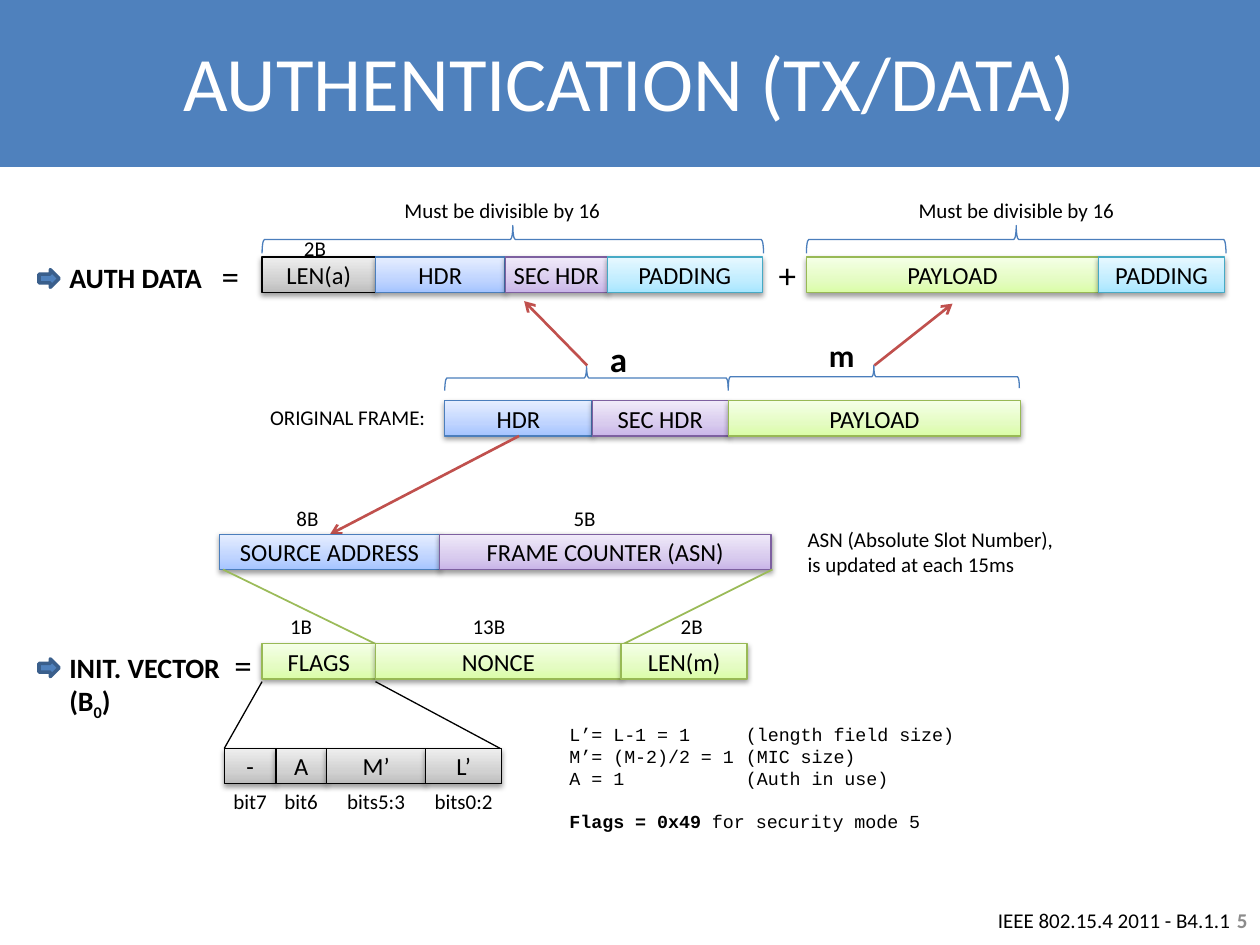
import copy

import lxml.etree
import pptx
import pptx.dml.color
import pptx.enum.shapes
import pptx.enum.text
import pptx.oxml.ns
import pptx.util

Inches = pptx.util.Inches
Pt = pptx.util.Pt
RGBColor = pptx.dml.color.RGBColor
Align = pptx.enum.text.PP_ALIGN
Anchor = pptx.enum.text.MSO_ANCHOR
Shape = pptx.enum.shapes.MSO_SHAPE
qn = pptx.oxml.ns.qn

BLACK = RGBColor(0x00, 0x00, 0x00)
WHITE = RGBColor(0xFF, 0xFF, 0xFF)
BLUE = RGBColor(0x4F, 0x81, 0xBD)
DARK_BLUE = RGBColor(0x3A, 0x5F, 0x8C)
BRACE_BLUE = RGBColor(0x4B, 0x7E, 0xBC)
RED = RGBColor(0xC0, 0x50, 0x4D)
GREEN = RGBColor(0x9B, 0xBB, 0x59)
NUMBER_GRAY = RGBColor(0x8C, 0x8C, 0x8C)

# Field styles: outline, then gradient colours from bottom to top
HEADER = (BRACE_BLUE, RGBColor(0xA4, 0xC4, 0xFF), RGBColor(0xBF, 0xD4, 0xFF), RGBColor(0xE6, 0xEE, 0xFF))
DATA = (RGBColor(0x98, 0xB9, 0x55), RGBColor(0xDA, 0xFD, 0xA7), RGBColor(0xE4, 0xFC, 0xC2), RGBColor(0xF5, 0xFF, 0xE7))
LENGTH = (BLACK, RGBColor(0xBD, 0xBD, 0xBD), RGBColor(0xD1, 0xD1, 0xD1), RGBColor(0xEE, 0xEE, 0xEE))
PAD = (RGBColor(0x46, 0xAA, 0xC5), RGBColor(0xA7, 0xE6, 0xFF), RGBColor(0xC1, 0xED, 0xFF), RGBColor(0xE7, 0xF8, 0xFF))
SECURITY = (RGBColor(0x7D, 0x60, 0xA0), RGBColor(0xC9, 0xB5, 0xE8), RGBColor(0xD8, 0xCB, 0xEE), RGBColor(0xF0, 0xEA, 0xF9))

ROW_HEIGHT = 0.28
MARGIN = 0.04


def write(frame, lines, size=12, color=BLACK, align=Align.LEFT, anchor=Anchor.TOP, **font):
    """Each line is a string or a list of (text, font changes) pairs."""
    layout = {"word_wrap": True, "vertical_anchor": anchor}
    layout |= {f"margin_{side}": Inches(MARGIN) for side in ("left", "right", "top", "bottom")}
    for name, value in layout.items():
        setattr(frame, name, value)
    for index, line in enumerate(lines):
        para = frame.add_paragraph() if index else frame.paragraphs[0]
        para.alignment = align
        for text, changes in [(line, {})] if isinstance(line, str) else line:
            span = para.add_run()
            span.text = text
            span.font.color.rgb = color
            for name, value in ({"name": "Calibri", "size": Pt(size)} | font | changes).items():
                setattr(span.font, name, value)


def label(page, left, top, width, height, *lines, **style):
    box = page.shapes.add_textbox(*map(Inches, (left, top, width, height)))
    write(box.text_frame, lines, **style)
    return box


def centred_labels(page, top, labels):
    for text, center in labels:
        label(page, center - 0.35, top, 0.7, ROW_HEIGHT, text, align=Align.CENTER)


def solid(page, kind, left, top, width, height, fill, outline):
    shape = page.shapes.add_shape(kind, *map(Inches, (left, top, width, height)))
    shape.shadow.inherit = False
    shape.fill.solid()
    shape.fill.fore_color.rgb = fill
    shape.line.color.rgb = outline
    shape.line.width = Pt(2)


def field(page, left, top, width, text, style):
    outline, *colors = style
    shape = page.shapes.add_shape(Shape.RECTANGLE, *map(Inches, (left, top, width, ROW_HEIGHT)))
    shape.fill.gradient()
    shape.fill.gradient_angle = 90
    properties = shape._element.spPr
    stop_list = properties.find(".//" + qn("a:gsLst"))
    stop_list.insert(1, copy.deepcopy(stop_list[0]))
    for stop, position, color in zip(shape.fill.gradient_stops, (0, 0.35, 1), colors):
        stop.position = position
        stop.color.rgb = color
    shape.line.color.rgb = outline
    shape.line.width = Pt(0.75)
    # Soft shadow below the field
    shape.shadow.inherit = False
    shadow = lxml.etree.SubElement(properties.find(qn("a:effectLst")), qn("a:outerShdw"),
                                   blurRad=str(Pt(3.1)), dist=str(Pt(1.6)), dir="5400000", rotWithShape="0")
    tint = lxml.etree.SubElement(shadow, qn("a:srgbClr"), val="000000")
    lxml.etree.SubElement(tint, qn("a:alpha"), val="38000")
    write(shape.text_frame, [text], size=14, align=Align.CENTER, anchor=Anchor.MIDDLE)


def field_row(page, left, top, fields):
    for text, width, style in fields:
        field(page, left, top, width, text, style)
        left += width


def brace(page, left, top, width, height):
    """An upward brace: a left brace turned a quarter about its centre."""
    shape = page.shapes.add_shape(Shape.LEFT_BRACE, Inches(left + (width - height) / 2),
                                  Inches(top + (height - width) / 2), Inches(height), Inches(width))
    shape.rotation = 90
    shape.shadow.inherit = False
    shape.fill.background()
    shape.line.color.rgb = BRACE_BLUE
    shape.line.width = Pt(0.75)


def line(page, start, end, color, weight, arrow=False):
    connector = page.shapes.add_connector(pptx.enum.shapes.MSO_CONNECTOR.STRAIGHT,
                                          *map(Inches, (*start, *end)))
    connector.line.color.rgb = color
    connector.line.width = Pt(weight)
    if arrow:
        lxml.etree.SubElement(connector.line._get_or_add_ln(), qn("a:tailEnd"), type="arrow")
    lxml.etree.SubElement(connector._element.spPr, qn("a:effectLst"))


def header(page, left, top, width, height):
    solid(page, Shape.RECTANGLE, left, top, width, height, BLUE, BLUE)
    label(page, left + 0.12, top + 0.05, width - 0.24, 1.18, "AUTHENTICATION (TX/DATA)",
          size=44, color=WHITE, align=Align.CENTER, anchor=Anchor.MIDDLE)


def row_heading(page, left, top, width, equals_left, *lines):
    solid(page, Shape.RIGHT_ARROW, left, top + 0.11, 0.16, 0.14, BLUE, DARK_BLUE)
    label(page, left + 0.2, top, width, 0.35 * len(lines), *lines, size=16, bold=True)
    label(page, equals_left, top - 0.05, 0.27, 0.42, "=", size=20)


def auth_data(page, left, top):
    row_heading(page, 0.31, top - 0.01, 1.29, 1.72, "AUTH DATA")
    centred_labels(page, top - 0.21, [("2B", left + 0.42)])
    field_row(page, left, top, [("LEN(a)", 0.9, LENGTH), ("HDR", 1.03, HEADER),
                                ("SEC HDR", 0.81, SECURITY), ("PADDING", 1.23, PAD)])
    label(page, left + 4.06, top - 0.07, 0.27, 0.42, "+", size=20)
    field_row(page, left + 4.32, top, [("PAYLOAD", 2.32, DATA), ("PADDING", 1, PAD)])
    for brace_left, width, note_left in ((left, 3.98, 3.17), (left + 4.32, 3.33, 7.25)):
        brace(page, brace_left, top - 0.25, width, 0.22)
        label(page, note_left, top - 0.51, 1.68, ROW_HEIGHT, "Must be divisible by 16")


def original_frame(page, left, top):
    label(page, left - 1.44, top - 0.01, 1.34, ROW_HEIGHT, "ORIGINAL FRAME:", align=Align.CENTER)
    field_row(page, left, top, [("HDR", 1.17, HEADER), ("SEC HDR", 1.08, SECURITY), ("PAYLOAD", 2.32, DATA)])
    brace(page, left, top - 0.28, 2.25, 0.2)
    brace(page, left + 2.25, top - 0.28, 2.31, 0.18)
    label(page, left + 1.23, top - 0.54, 0.3, 0.42, "a", size=20, bold=True, align=Align.CENTER)
    label(page, left + 3, top - 0.55, 0.3, 0.38, "m", size=18, bold=True, align=Align.CENTER)
    for start, end in (((4.12, 3.46), (2.62, 4.24)), ((6.94, 2.9), (7.56, 2.41)), ((4.66, 2.9), (4.16, 2.39))):
        line(page, start, end, RED, 1.5, arrow=True)


def nonce_parts(page, left, top):
    centred_labels(page, top - 0.27, [("8B", left + 0.7), ("5B", left + 2.9)])
    field_row(page, left, top, [("SOURCE ADDRESS", 1.75, HEADER), ("FRAME COUNTER (ASN)", 2.63, SECURITY)])
    label(page, left + 4.63, top - 0.1, 2.13, 0.48, "ASN (Absolute Slot Number), is updated at each 15ms")
    line(page, (1.77, 4.52), (2.98, 5.11), GREEN, 1)
    line(page, (6.13, 4.52), (4.95, 5.11), GREEN, 1)


def init_vector(page, left, top):
    row_heading(page, 0.31, top + 0.01, 1.6, 1.82, "INIT. VECTOR", [("(B", {}), ("0", {}), (")", {})])
    subscript = page.shapes[-2].text_frame.paragraphs[1].runs[1]
    subscript.font._element.set("baseline", "-25000")
    centred_labels(page, top - 0.28, [("1B", left + 0.31), ("13B", left + 1.8), ("2B", left + 3.41)])
    field_row(page, left, top, [("FLAGS", 0.9, DATA), ("NONCE", 1.95, DATA), ("LEN(m)", 1, DATA)])


def flag_bits(page, left, top):
    bits = [("-", 0.41, "bit7"), ("A", 0.4, "bit6"), ("M’", 0.79, "bits5:3"), ("L’", 0.6, "bits0:2")]
    field_row(page, left, top, [(text, width, LENGTH) for text, width, _ in bits])
    for _, width, name in bits:
        centred_labels(page, top + ROW_HEIGHT, [(name, left + width / 2)])
        left += width
    line(page, (2.08, 5.41), (1.78, 5.94), BLACK, 0.75)
    line(page, (2.98, 5.41), (3.97, 5.94), BLACK, 0.75)


def flag_values(page, left, top):
    box = label(page, left, top, 3.27, 0.96, "L’= L-1 = 1\t(length field size)", "M’= (M-2)/2 = 1\t(MIC size)",
                "A = 1\t(Auth in use)", [("Flags = 0x49 ", {"bold": True}), ("for security mode 5", {})],
                size=10.5, name="Courier New")
    *values, result = box.text_frame.paragraphs
    for para in values:
        tabs = lxml.etree.SubElement(para._p.get_or_add_pPr(), qn("a:tabLst"))
        lxml.etree.SubElement(tabs, qn("a:tab"), pos=str(Inches(1.4)), algn="l")
    result.space_before = Pt(12)


def footer(page, left, top):
    label(page, left, top, 2.03, ROW_HEIGHT, "IEEE 802.15.4 2011 - B4.1.1")
    label(page, left + 1.61, top - 0.06, 0.45, 0.4, "5", color=NUMBER_GRAY, bold=True,
          align=Align.RIGHT, anchor=Anchor.MIDDLE)


def main():
    deck = pptx.Presentation()
    deck.slide_width, deck.slide_height = Inches(10), Inches(7.5)
    page = deck.slides.add_slide(deck.slide_layouts[6])
    header(page, 0, 0, 10, 1.31)
    auth_data(page, 2.08, 2.04)
    original_frame(page, 3.53, 3.18)
    nonce_parts(page, 1.74, 4.24)
    init_vector(page, 2.08, 5.11)
    flag_bits(page, 1.78, 5.94)
    flag_values(page, 4.48, 5.7)
    footer(page, 7.88, 7.16)
    deck.save("out.pptx")


if __name__ == "__main__":
    main()
